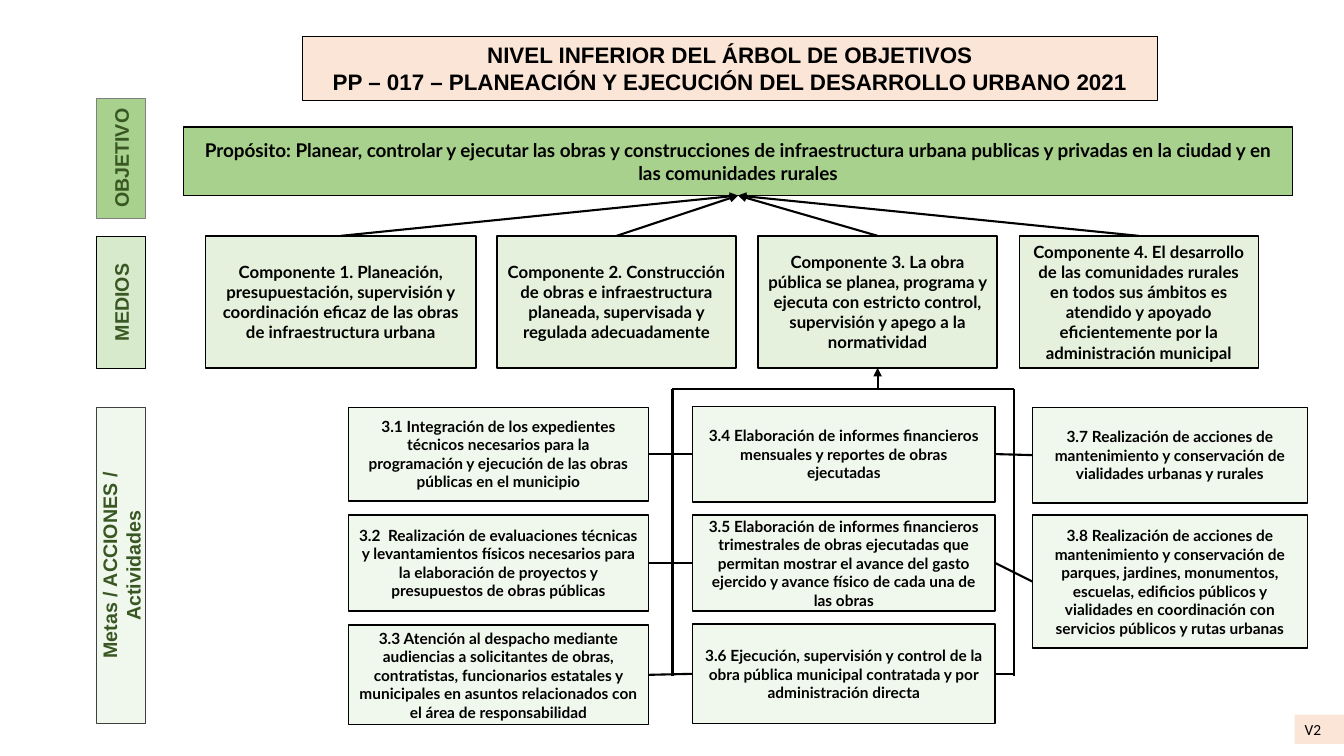
from lxml import etree
from pptx import Presentation, util as u
from pptx.dml.color import RGBColor
from pptx.enum import shapes, text
from pptx.oxml.ns import qn

BLACK = RGBColor(0, 0, 0)
GREY = RGBColor(0x80, 0x80, 0x80)
DARK_GREY = RGBColor(0x40, 0x40, 0x40)
DARK_GREEN = RGBColor(0x38, 0x57, 0x23)
GREEN = RGBColor(0xA9, 0xD1, 0x8E)
PALE_GREEN = RGBColor(0xC5, 0xE0, 0xB4)
PEACH = RGBColor(0xFB, 0xE5, 0xD6)

# All lengths are px, 100 to the inch; boxes are (left, top, width, height).
SLIDE_SIZE = (1333, 750)
TITLE = ("NIVEL INFERIOR DEL ÁRBOL DE OBJETIVOS\n"
         "PP – 017 – PLANEACIÓN Y EJECUCIÓN DEL DESARROLLO URBANO 2021")
TITLE_BOX = (300, 36, 848, 64)
VERSION = "V2"
VERSION_BOX = (1284, 709, 49, 29)

# Level label, centre y, length, fill, opacity in percent, line colour
LEVELS = [
    ("OBJETIVO", 157, 119, GREEN, 100, GREY),
    ("MEDIOS", 300, 131, GREEN, 45, BLACK),
    ("Metas / ACCIONES / Actividades", 561, 313, PALE_GREEN, 25, DARK_GREY),
]
LEVEL_CENTRE, LEVEL_THICKNESS = 120, 49

PURPOSE = ("Propósito: Planear, controlar y ejecutar las obras y construcciones de "
           "infraestructura urbana publicas y privadas en la ciudad y en las comunidades rurales")
PURPOSE_BOX = (182, 126, 1100, 68)

# Left, width, text
COMPONENTS = [
    (204, 268, "Componente 1. Planeación, presupuestación, supervisión y coordinación "
               "eficaz de las obras de infraestructura urbana"),
    (493, 237, "Componente 2. Construcción de obras e infraestructura planeada, "
               "supervisada y regulada adecuadamente"),
    (752, 237, "Componente 3. La obra pública se planea, programa y ejecuta con estricto "
               "control, supervisión y apego a la normatividad"),
    (1011, 237, "Componente 4. El desarrollo de las comunidades rurales en todos sus "
                "ámbitos es atendido y apoyado eficientemente por la administración municipal"),
]
COMPONENT_TOP, COMPONENT_HEIGHT = 234, 131

# Column left and width, then (top, height, text) of each activity
ACTIVITIES = [
    (346, 297, [
        (404, 93, "3.1 Integración de los expedientes técnicos necesarios para la "
                  "programación y ejecución de las obras públicas en el municipio"),
        (511, 95, "3.2  Realización de evaluaciones técnicas y levantamientos físicos "
                  "necesarios para la elaboración de proyectos y presupuestos de obras públicas"),
        (620, 99, "3.3 Atención al despacho mediante audiencias a solicitantes de obras, "
                  "contratistas, funcionarios estatales y municipales en asuntos relacionados "
                  "con el área de responsabilidad"),
    ]),
    (687, 300, [
        (403, 95, "3.4 Elaboración de informes financieros mensuales y reportes de obras "
                  "ejecutadas"),
        (511, 95, "3.5 Elaboración de informes financieros trimestrales de obras ejecutadas "
                  "que permitan mostrar el avance del gasto ejercido y avance físico de cada "
                  "una de las obras"),
        (619, 99, "3.6 Ejecución, supervisión y control de la obra pública municipal "
                  "contratada y por administración directa"),
    ]),
    (1024, 273, [
        (404, 95, "3.7 Realización de acciones de mantenimiento y conservación de vialidades "
                  "urbanas y rurales"),
        (511, 132, "3.8 Realización de acciones de mantenimiento y conservación de parques, "
                   "jardines, monumentos, escuelas, edificios públicos y vialidades en "
                   "coordinación con servicios públicos y rutas urbanas"),
    ]),
]
BUS_LEFT, BUS_RIGHT, BUS_TOP, BUS_BOTTOM = 667, 1006, 386, 671


def px(length):
    return u.Emu(round(length * 9144))


def middle(box, side):
    """Return the midpoint of one side of a box."""
    left, top, width, height = box
    return {"left": (left, top + height / 2), "right": (left + width, top + height / 2),
            "top": (left + width / 2, top), "bottom": (left + width / 2, top + height)}[side]


def write(shape, words, size, font, color=BLACK, bold=True,
          align=text.PP_ALIGN.CENTER, anchor=text.MSO_ANCHOR.MIDDLE):
    frame = shape.text_frame
    frame.text = words
    frame.word_wrap = True
    frame.auto_size = text.MSO_AUTO_SIZE.NONE
    frame.vertical_anchor = anchor
    for para in frame.paragraphs:
        para.alignment = align
        for span in para.runs:
            span.font.size = u.Pt(size)
            span.font.name = font
            span.font.bold = bold
            span.font.color.rgb = color


def paint(shape, fill, line=BLACK, width=1, opacity=100):
    shape.fill.solid()
    shape.fill.fore_color.rgb = fill
    if opacity < 100:
        color = shape.fill._xPr.find(qn("a:solidFill"))[0]
        etree.SubElement(color, qn("a:alpha"), val=str(opacity * 1000))
    if line is None:
        shape.line.fill.background()
    else:
        shape.line.color.rgb = line
        shape.line.width = u.Pt(width)


def add_box(page, box, kind=shapes.MSO_SHAPE.FLOWCHART_PROCESS):
    shape = page.shapes.add_shape(kind, *map(px, box))
    shape.shadow.inherit = False
    return shape


def connect(page, start, end, arrow=False):
    line = page.shapes.add_connector(shapes.MSO_CONNECTOR.STRAIGHT, *map(px, start + end))
    line.line.color.rgb = BLACK
    line.line.width = u.Pt(1.5)
    if arrow:
        etree.SubElement(line.line._get_or_add_ln(), qn("a:tailEnd"), type="triangle")
    etree.SubElement(line._element.spPr, qn("a:effectLst"))
    return line


def add_levels(page):
    for label, centre, length, fill, opacity, line in LEVELS:
        level = add_box(page, (LEVEL_CENTRE - length / 2, centre - LEVEL_THICKNESS / 2,
                               length, LEVEL_THICKNESS))
        level.rotation = 270
        paint(level, fill, line, opacity=opacity)
        write(level, label, 14, "Arial", DARK_GREEN)


def add_components(page):
    """Add the components with their arrows to the purpose; return their boxes."""
    boxes = []
    for left, width, words in COMPONENTS:
        box = (left, COMPONENT_TOP, width, COMPONENT_HEIGHT)
        component = add_box(page, box)
        paint(component, GREEN, opacity=30)
        write(component, words, 12, "Lato")
        connect(page, middle(box, "top"), middle(PURPOSE_BOX, "bottom"), arrow=True)
        boxes.append(box)
    return boxes


def add_activities(page):
    """Add the activities and the links between columns; return the boxes by column."""
    columns = []
    for left, width, rows in ACTIVITIES:
        column = [(left, top, width, height) for top, height, _ in rows]
        for box, (_, _, words) in zip(column, rows):
            activity = add_box(page, box)
            paint(activity, PALE_GREEN, opacity=25)
            write(activity, words, 11, "Lato")
        if columns:
            for before, after in zip(columns[-1], column):
                connect(page, middle(after, "left"), middle(before, "right"))
        columns.append(column)
    return columns


def add_bus(page, component, last_activity):
    """Draw the bracket that gathers the activities and points to their component."""
    target = middle(component, "bottom")
    for x in (BUS_LEFT, BUS_RIGHT):
        connect(page, (x, BUS_TOP), (x, BUS_BOTTOM))
    connect(page, (target[0], BUS_TOP), (BUS_LEFT, BUS_TOP))
    exit_point = middle(last_activity, "right")
    connect(page, (BUS_RIGHT, exit_point[1]), exit_point)
    elbow = connect(page, target, (BUS_RIGHT, BUS_TOP), arrow=True)
    properties = elbow._element.spPr
    properties.find(qn("a:prstGeom")).set("prst", "bentConnector2")
    properties.find(qn("a:xfrm")).set("rot", "10800000")


def main():
    deck = Presentation()
    deck.slide_width, deck.slide_height = map(px, SLIDE_SIZE)
    page = deck.slides.add_slide(deck.slide_layouts[5])

    title = page.shapes.title
    title.left, title.top, title.width, title.height = map(px, TITLE_BOX)
    paint(title, PEACH, width=0.75)
    write(title, TITLE, 16, "Arial", anchor=text.MSO_ANCHOR.TOP)

    add_levels(page)
    purpose = add_box(page, PURPOSE_BOX)
    paint(purpose, GREEN)
    write(purpose, PURPOSE, 13.5, "Lato")
    components = add_components(page)
    columns = add_activities(page)
    add_bus(page, components[2], columns[1][-1])

    version = add_box(page, VERSION_BOX, shapes.MSO_SHAPE.RECTANGLE)
    paint(version, PEACH, line=None)
    write(version, VERSION, 11, "Calibri", bold=False,
          align=text.PP_ALIGN.LEFT, anchor=text.MSO_ANCHOR.TOP)
    deck.save("out.pptx")


if __name__ == "__main__":
    main()
